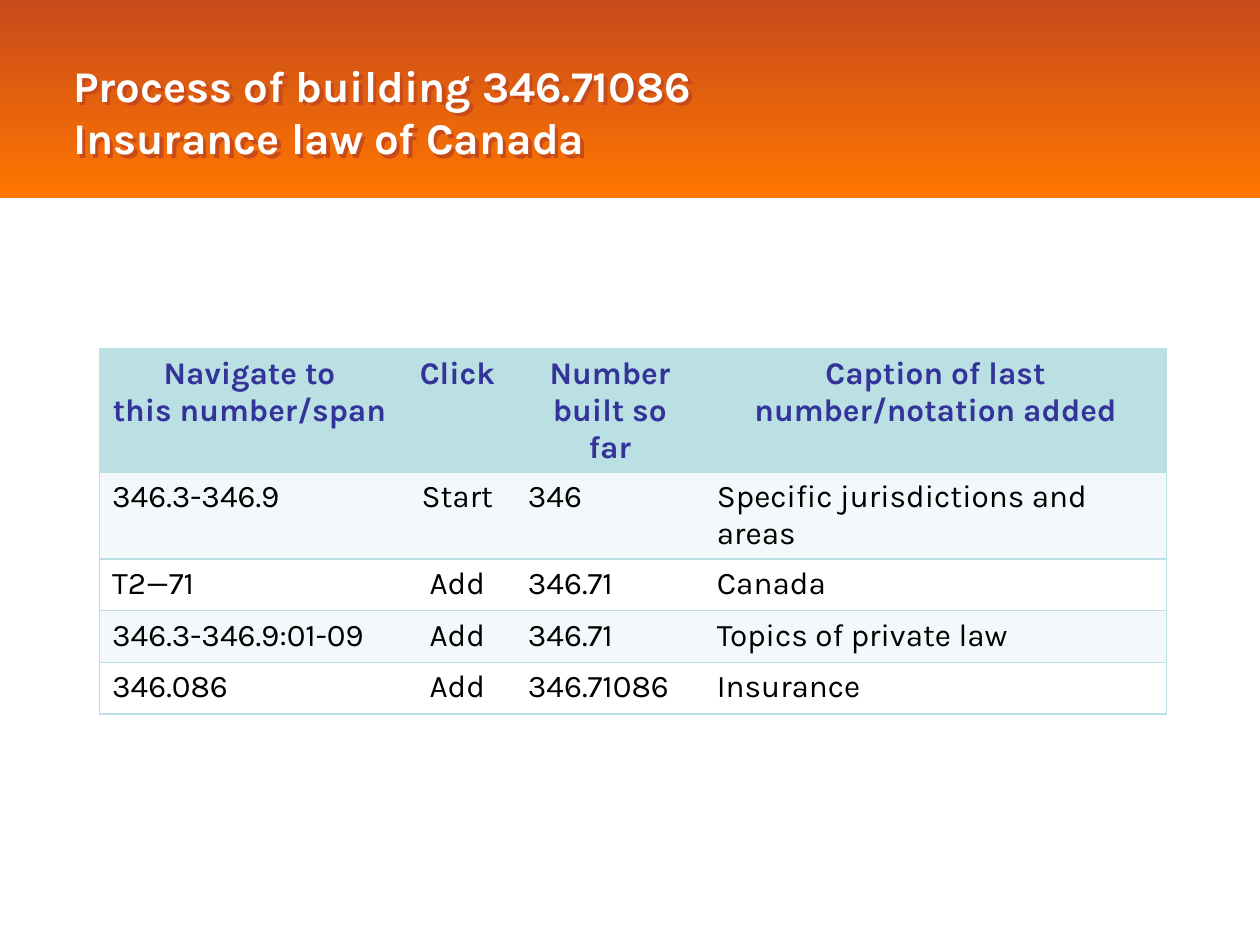
from copy import deepcopy

from lxml import etree
from pptx import Presentation
from pptx.dml.color import RGBColor
from pptx.enum.shapes import MSO_SHAPE
from pptx.enum.text import MSO_ANCHOR, PP_ALIGN
from pptx.oxml import parse_xml
from pptx.oxml.ns import nsdecls, qn
from pptx.util import Inches, Pt

FONT = "Karla"
TEAL = "BBE0E3"
PALE = "F3F9FA"
WHITE = "FFFFFF"
BLACK = "000000"
INDIGO = "333399"
RUST = "C74A1B"
ORANGE = "FF7600"

COLUMN_WIDTHS = [2.38, 0.92, 1.5, 3.67]
ROW_HEIGHT = 0.41
CLICK_COLUMN = 1
ROWS = [
    ["Navigate to\nthis number/span", "Click", "Number built so far",
     "Caption of last number/notation added"],
    ["346.3-346.9", "Start", "346", "Specific jurisdictions and areas"],
    ["T2—71", "Add", "346.71", "Canada"],
    ["346.3-346.9:01-09", "Add", "346.71", "Topics of private law"],
    ["346.086", "Add", "346.71086", "Insurance"],
]


def color(value):
    return RGBColor.from_string(value)


def write(para, text, size=18, fill=BLACK, bold=False, align=PP_ALIGN.LEFT):
    para.text = text
    para.alignment = align
    for span in para.runs:
        span.font.name = FONT
        span.font.size = Pt(size)
        span.font.bold = bold
        span.font.color.rgb = color(fill)
    for line_break in para._p.findall(qn("a:br")):
        line_break.insert(0, deepcopy(para.runs[0]._r.rPr))


def add_banner(page, left, top, width, height):
    banner = page.shapes.add_shape(
        MSO_SHAPE.RECTANGLE, Inches(left), Inches(top), Inches(width), Inches(height))
    banner.shadow.inherit = False
    banner.line.fill.background()
    banner.fill.gradient()
    banner.fill.gradient_angle = 270
    for stop, value, position in zip(banner.fill.gradient_stops, (RUST, ORANGE), (0, 1)):
        stop.color.rgb = color(value)
        stop.position = position
    tree = page.shapes._spTree
    tree.remove(banner._element)
    tree.insert(2, banner._element)


def place_title(page, text, left, top, width, height):
    title = page.shapes.title
    title.left, title.top = Inches(left), Inches(top)
    title.width, title.height = Inches(width), Inches(height)
    title.text_frame.word_wrap = True
    title.text_frame.vertical_anchor = MSO_ANCHOR.MIDDLE
    write(title.text_frame.paragraphs[0], text, size=25, fill=WHITE, bold=True)
    title._element.spPr.append(parse_xml(
        f'<a:effectLst {nsdecls("a")}><a:outerShdw dist="{Inches(0.04)}" dir="2700000">'
        f'<a:srgbClr val="{RUST}"/></a:outerShdw></a:effectLst>'))


def set_borders(cell, visible_sides):
    properties = cell._tc.get_or_add_tcPr()
    for side in "LRTB":
        line = etree.SubElement(properties, qn(f"a:ln{side}"), w=str(Pt(1)))
        if side in visible_sides:
            paint = etree.SubElement(line, qn("a:solidFill"))
            etree.SubElement(paint, qn("a:srgbClr"), val=TEAL)
        else:
            etree.SubElement(line, qn("a:noFill"))


def fill_cell(cell, text, row, column):
    header = row == 0
    last = len(COLUMN_WIDTHS) - 1
    set_borders(cell, "TB" + {0: "L", last: "R"}.get(column, ""))
    cell.fill.solid()
    cell.fill.fore_color.rgb = color(TEAL if header else PALE if row % 2 else WHITE)
    centered = header or column == CLICK_COLUMN
    lines = text.split("\n")
    for index, line in enumerate(lines):
        frame = cell.text_frame
        para = frame.add_paragraph() if index else frame.paragraphs[0]
        write(para, line, fill=INDIGO if header else BLACK, bold=header,
              align=PP_ALIGN.CENTER if centered else PP_ALIGN.LEFT)


def add_steps_table(page, left, top):
    table = page.shapes.add_table(
        len(ROWS), len(COLUMN_WIDTHS), Inches(left), Inches(top),
        Inches(sum(COLUMN_WIDTHS)), Inches(ROW_HEIGHT * len(ROWS))).table
    for column, width in zip(table.columns, COLUMN_WIDTHS):
        column.width = Inches(width)
    for row, texts in enumerate(ROWS):
        table.rows[row].height = Inches(ROW_HEIGHT)
        for column, text in enumerate(texts):
            fill_cell(table.cell(row, column), text, row, column)


def main():
    deck = Presentation()
    deck.slide_width, deck.slide_height = Inches(10), Inches(7.5)
    page = deck.slides.add_slide(deck.slide_layouts[5])
    add_banner(page, 0, 0, 10, 1.57)
    place_title(page, "Process of building 346.71086\nInsurance law of Canada",
                0.48, 0.18, 7.64, 1.4)
    add_steps_table(page, 0.79, 2.77)
    deck.save("out.pptx")


if __name__ == "__main__":
    main()
